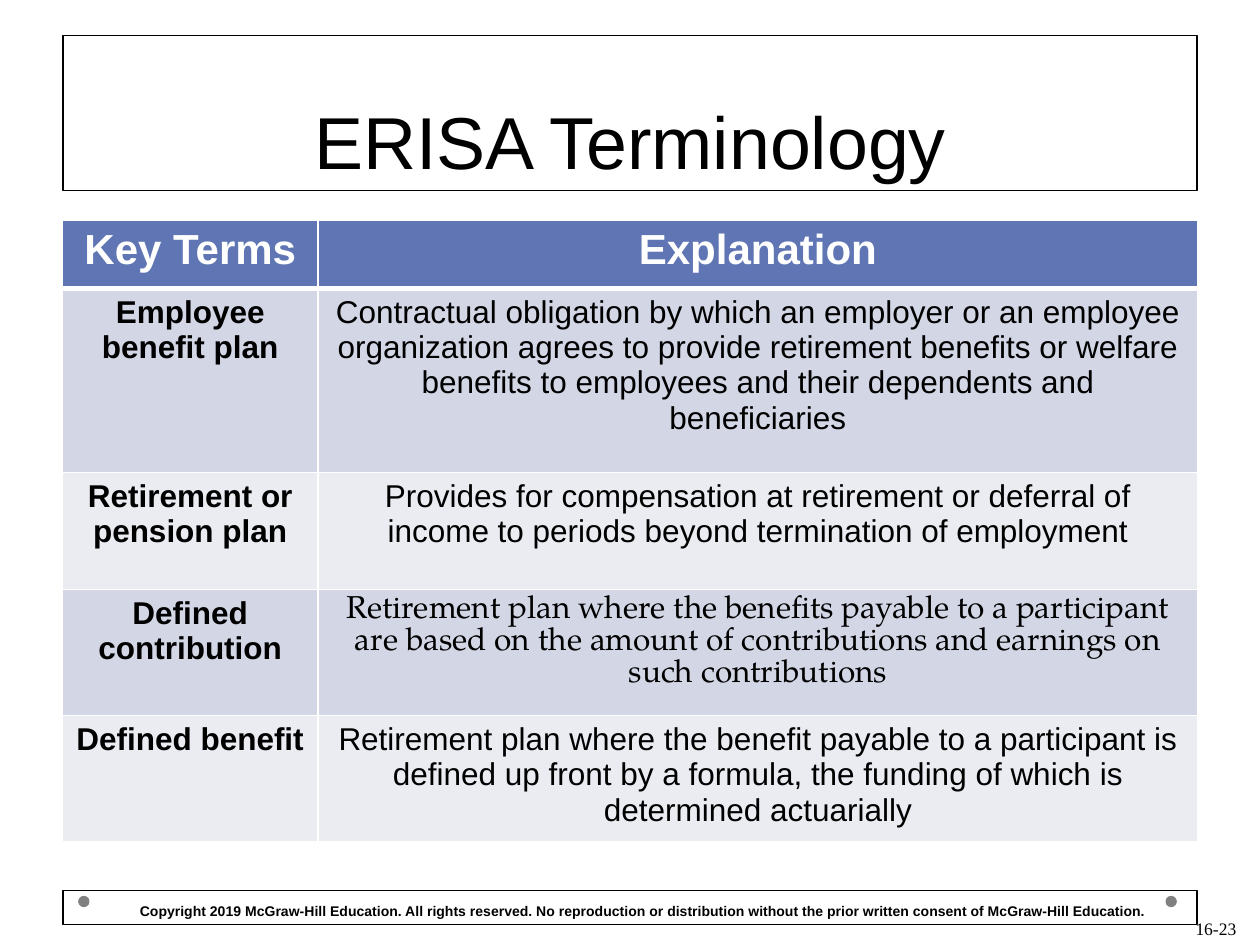
from lxml import etree
from pptx import Presentation, util as u
from pptx.dml.color import RGBColor
from pptx.enum import shapes, text
from pptx.oxml.ns import qn

BLACK, WHITE, GREY = "000000", "FFFFFF", "808080"
HEADER, BANDS = "6076B4", ("D2D6E5", "EAECF2")
ALIGN, ANCHOR = text.PP_ALIGN, text.MSO_ANCHOR

HEADINGS = ("Key Terms", "Explanation")
TERMS = (
    ("Employee benefit plan",
     "Contractual obligation by which an employer or an employee organization agrees to "
     "provide retirement benefits or welfare benefits to employees and their dependents "
     "and beneficiaries"),
    ("Retirement or pension plan",
     "Provides for compensation at retirement or deferral of income to periods beyond "
     "termination of employment"),
    ("Defined contribution",
     "Retirement plan where the benefits payable to a participant are based on the amount "
     "of contributions and earnings on such contributions"),
    ("Defined benefit",
     "Retirement plan where the benefit payable to a participant is defined up front by a "
     "formula, the funding of which is determined actuarially"),
)
COPYRIGHT = ("Copyright 2019 McGraw-Hill Education. All rights reserved. No reproduction or "
             "distribution without the prior written consent of McGraw-Hill Education.")


def rgb(value):
    return RGBColor.from_string(value)


def write(frame, words, size=18, font="Arial", color=BLACK, bold=False, align=ALIGN.CENTER,
          anchor=ANCHOR.TOP, insets=(0.1, 0.05, 0.1, 0.05), spacing=None):
    """Fill a text frame with one formatted paragraph."""
    frame.word_wrap = True
    frame.vertical_anchor = anchor
    (frame.margin_left, frame.margin_top,
     frame.margin_right, frame.margin_bottom) = map(u.Inches, insets)
    paragraph = frame.paragraphs[0]
    paragraph.alignment = align
    paragraph.line_spacing = spacing
    paragraph.space_before = u.Pt(0)
    run = paragraph.add_run()
    run.text = words
    run.font.size, run.font.name, run.font.bold = u.Pt(size), font, bold
    run.font.color.rgb = rgb(color)


def cell_borders(cell, **widths):
    """Draw white cell edges; widths in points by side: L, R, T, B."""
    properties = cell._tc.get_or_add_tcPr()
    for place, (side, width) in enumerate(widths.items()):
        edge = etree.Element(qn(f"a:ln{side}"), w=str(u.Pt(width)))
        fill = etree.SubElement(edge, qn("a:solidFill"))
        etree.SubElement(fill, qn("a:srgbClr"), val=WHITE)
        properties.insert(place, edge)


class Deck:
    """Slide on a grid of 100 columns by 75 rows."""

    def __init__(self):
        self.file = Presentation()
        self.file.slide_width, self.file.slide_height = u.Inches(10), u.Inches(7.5)
        self.column = self.file.slide_width / 100
        self.row = self.file.slide_height / 75
        self.slide = self.file.slides.add_slide(self.file.slide_layouts[5])

    def place(self, left, top, width, height):
        return (round(left * self.column), round(top * self.row),
                round(width * self.column), round(height * self.row))

    def outline(self, shape):
        shape.line.color.rgb = rgb(BLACK)
        shape.line.width = u.Pt(0.75)

    def title(self, words, *area):
        title = self.slide.shapes.title
        title.left, title.top, title.width, title.height = self.place(*area)
        self.outline(title)
        write(title.text_frame, words, size=42, anchor=ANCHOR.BOTTOM)

    def dot(self, *area):
        dot = self.slide.shapes.add_shape(shapes.MSO_SHAPE.OVAL, *self.place(*area))
        dot.shadow.inherit = False
        dot.fill.solid()
        dot.fill.fore_color.rgb = rgb(GREY)
        dot.line.fill.background()

    def label(self, words, *area, outlined=False, **style):
        label = self.slide.shapes.add_textbox(*self.place(*area))
        if outlined:
            self.outline(label)
        write(label.text_frame, words, **style)

    def table(self, left, top, columns, rows):
        area = self.place(left, top, sum(columns), sum(rows))
        table = self.slide.shapes.add_table(len(rows), len(columns), *area).table
        for column, width in zip(table.columns, columns):
            column.width = round(width * self.column)
        for row, height in zip(table.rows, rows):
            row.height = round(height * self.row)
        return table

    def cell(self, cell, words, fill, top=1, bottom=1, **style):
        write(cell.text_frame, words, **style)
        cell.vertical_anchor = ANCHOR.TOP
        cell.fill.solid()
        cell.fill.fore_color.rgb = rgb(fill)
        cell_borders(cell, L=1, R=1, T=top, B=bottom)


def main():
    deck = Deck()

    # Title
    deck.title("ERISA Terminology", 5, 2.8, 90, 12.3)

    # Footer dots and page number
    for left in (6.2, 92.5):
        deck.dot(left, 71.1, 0.9, 0.9)
    deck.label("16-23", 75.8, 70, 23.3, 5, size=10, font="Times New Roman",
               align=ALIGN.RIGHT, anchor=ANCHOR.BOTTOM)

    # Terms table
    terms = deck.table(4.95, 17.5, (20.3, 69.8), (5.4, 14.6, 9.3, 10, 10))
    for column, heading in enumerate(HEADINGS):
        deck.cell(terms.cell(0, column), heading, HEADER, bottom=3,
                  size=24, color=WHITE, bold=True)
    for row, (term, explanation) in enumerate(TERMS, 1):
        band = BANDS[(row - 1) % 2]
        top = 3 if row == 1 else 1
        font = "TeX Gyre Pagella" if term == "Defined contribution" else "Arial"
        deck.cell(terms.cell(row, 0), term, band, top=top, bold=True)
        deck.cell(terms.cell(row, 1), explanation, band, top=top, font=font)

    # Copyright line
    deck.label(COPYRIGHT, 5, 70.7, 90, 2.7, outlined=True, size=8, bold=True,
               align=ALIGN.LEFT, insets=(0.61, 0.09, 0.1, 0.05))

    deck.file.save("out.pptx")


if __name__ == "__main__":
    main()
